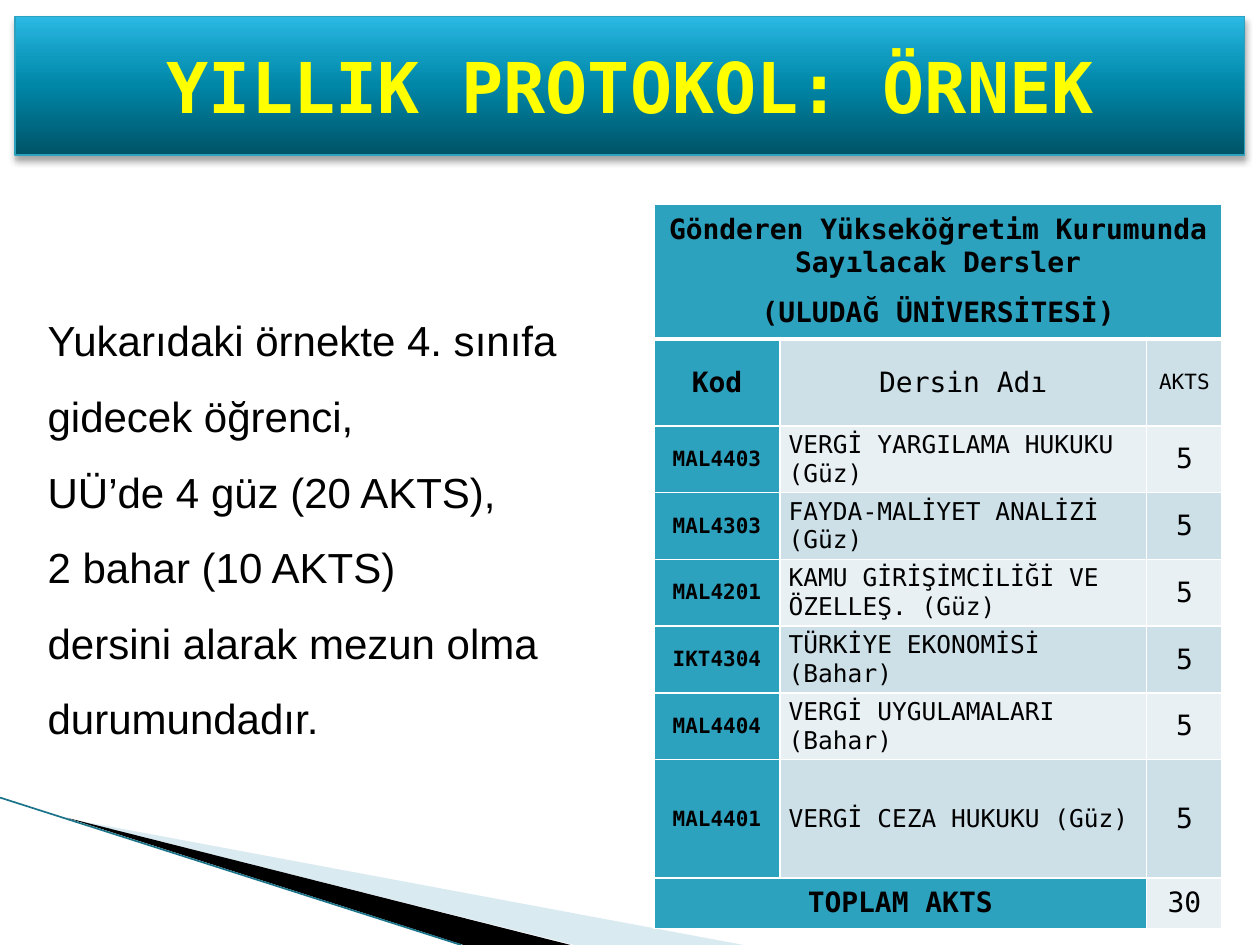
from lxml.etree import SubElement
from pptx import Presentation
from pptx.dml.color import RGBColor
from pptx.enum.shapes import MSO_CONNECTOR, MSO_SHAPE
from pptx.enum.text import MSO_ANCHOR, PP_ALIGN
from pptx.oxml import parse_xml
from pptx.oxml.ns import nsdecls, qn
from pptx.util import Inches, Pt

MONO, SANS = "DejaVu Sans Mono", "Arial"
TEAL, BLACK, WHITE, YELLOW = "2DA2BF", "000000", "FFFFFF", "FFFF00"
BANDS = ["CDE0E8", "E8F0F4"]

TITLE = "YILLIK PROTOKOL: ÖRNEK"
GRADIENT = [(0, "005367"), (50, "0086A7"), (70, "0E9ABE"), (100, "2CB9E3")]
NOTES = [
    "Yukarıdaki örnekte 4. sınıfa gidecek öğrenci,",
    "UÜ’de 4 güz (20 AKTS),",
    "2 bahar (10 AKTS)",
    "dersini alarak mezun olma durumundadır.",
]
HEADING = "Gönderen Yükseköğretim Kurumunda Sayılacak Dersler\n(ULUDAĞ ÜNİVERSİTESİ)"
LABELS = ("Kod", "Dersin Adı", "AKTS")
COURSES = [
    ("MAL4403", "VERGİ YARGILAMA HUKUKU (Güz)", "5"),
    ("MAL4303", "FAYDA-MALİYET ANALİZİ (Güz)", "5"),
    ("MAL4201", "KAMU GİRİŞİMCİLİĞİ VE ÖZELLEŞ. (Güz)", "5"),
    ("IKT4304", "TÜRKİYE EKONOMİSİ (Bahar)", "5"),
    ("MAL4404", "VERGİ UYGULAMALARI (Bahar)", "5"),
    ("MAL4401", "VERGİ CEZA HUKUKU (Güz)", "5"),
]
TOTAL = ("TOPLAM AKTS", "", "30")
COL_WIDTHS = [1, 2.91, 0.6]
ROW_HEIGHTS = [1.07, 0.69] + [0.53] * 5 + [0.94, 0.4]
WEDGES = [
    ([(0.55, 6.5), (5.9, 7.5), (4.56, 7.5)], "A0CBDC", 40),
    ([(0.53, 6.49), (4.53, 7.5), (3.68, 7.5)], BLACK, 100),
]


def rgb(color):
    """Turn a hex string into a colour."""
    return RGBColor.from_string(color)


def style(p, size, font, color=BLACK, bold=False, align=PP_ALIGN.LEFT):
    """Format a paragraph and its runs."""
    p.alignment = align
    for r in p.runs:
        r.font.size, r.font.name, r.font.bold = Pt(size), font, bold
        r.font.color.rgb = rgb(color)


def add_wedge(slide, points, color, opacity):
    """Draw one wedge of the corner decoration."""
    pts = [(Inches(x), Inches(y)) for x, y in points]
    builder = slide.shapes.build_freeform(*pts[0])
    builder.add_line_segments(pts[1:])
    sp = builder.convert_to_shape()
    sp.shadow.inherit = False
    sp.fill.solid()
    sp.fill.fore_color.rgb = rgb(color)
    sp.line.fill.background()
    if opacity < 100:
        clr = sp._element.spPr.find(qn("a:solidFill"))[0]
        SubElement(clr, qn("a:alpha"), val=str(opacity * 1000))


def add_edge(slide):
    """Draw the thin line along the wedges."""
    line = slide.shapes.add_connector(
        MSO_CONNECTOR.STRAIGHT, 0, Inches(6.33), Inches(3.66), Inches(7.5))
    line.line.color.rgb = rgb("1A7388")
    line.line.width = Pt(0.95)
    SubElement(line._element.spPr, qn("a:effectLst"))


def add_title(slide):
    """Draw the title bar with its gradient and shadow."""
    sp = slide.shapes.add_shape(
        MSO_SHAPE.RECTANGLE, Inches(0.12), Inches(0.13), Inches(9.76), Inches(1.1))
    stops = "".join(f'<a:gs pos="{pos * 1000}"><a:srgbClr val="{color}"/></a:gs>'
                    for pos, color in GRADIENT)
    spPr = sp._element.spPr
    spPr.find(qn("a:prstGeom")).addnext(parse_xml(
        f'<a:gradFill {nsdecls("a")}><a:gsLst>{stops}</a:gsLst>'
        '<a:lin ang="16200000" scaled="0"/></a:gradFill>'))
    sp.line.color.rgb = rgb(TEAL)
    sp.line.width = Pt(0.75)
    spPr.append(parse_xml(
        f'<a:effectLst {nsdecls("a")}><a:outerShdw blurRad="{Pt(4)}" dist="{Pt(3)}" '
        f'dir="5400000" rotWithShape="0"><a:srgbClr val="{BLACK}">'
        '<a:alpha val="35000"/></a:srgbClr></a:outerShdw></a:effectLst>'))
    tf = sp.text_frame
    tf.text = TITLE
    tf.vertical_anchor = MSO_ANCHOR.MIDDLE
    style(tf.paragraphs[0], 40, MONO, YELLOW, True, PP_ALIGN.CENTER)


def add_notes(slide):
    """Write the explanation on the left."""
    tf = slide.shapes.add_textbox(
        Inches(0.28), Inches(2.25), Inches(4.33), Inches(3.74)).text_frame
    tf.word_wrap = True
    tf.text = "\n".join(NOTES)
    for p in tf.paragraphs:
        p.line_spacing = 1.5
        style(p, 24, SANS)


def fill_cell(cell, text, size, fill, bold, align, bottom):
    """Set the text, fill and borders of one cell."""
    cell.text = text
    cell.vertical_anchor = MSO_ANCHOR.MIDDLE
    cell.margin_left = cell.margin_right = Inches(0.07)
    cell.margin_top = cell.margin_bottom = 0
    for p in cell.text_frame.paragraphs:
        style(p, size, MONO, BLACK, bold, align)
    cell.fill.solid()
    cell.fill.fore_color.rgb = rgb(fill)
    tcPr = cell._tc.get_or_add_tcPr()
    widths = {"lnL": 1, "lnR": 1, "lnT": 1, "lnB": bottom}
    for i, (side, width) in enumerate(widths.items()):
        tcPr.insert(i, parse_xml(
            f'<a:{side} {nsdecls("a")} w="{Pt(width)}"><a:solidFill>'
            f'<a:srgbClr val="{WHITE}"/></a:solidFill></a:{side}>'))


def add_courses(slide):
    """Build the course table."""
    rows = [(HEADING, "", ""), LABELS, *COURSES, TOTAL]
    last = len(rows) - 1
    table = slide.shapes.add_table(
        len(rows), len(COL_WIDTHS), Inches(5.19), Inches(1.62),
        Inches(sum(COL_WIDTHS)), Inches(sum(ROW_HEIGHTS))).table
    for col, width in zip(table.columns, COL_WIDTHS):
        col.width = Inches(width)
    for row, height in zip(table.rows, ROW_HEIGHTS):
        row.height = Inches(height)
    for i, row in enumerate(rows):
        is_course = 1 < i < last
        sizes = (12, 14, 16) if is_course else (16, 16, 12 if i == 1 else 16)
        for j, text in enumerate(row):
            strong = i == 0 or j == 0
            align = PP_ALIGN.LEFT if is_course and j == 1 else PP_ALIGN.CENTER
            fill_cell(table.cell(i, j), text, sizes[j],
                      TEAL if strong else BANDS[(i + 1) % 2],
                      strong, align, 3 if i == 0 else 1)
    table.cell(0, 0).merge(table.cell(0, 2))
    table.cell(last, 0).merge(table.cell(last, 1))
    table.cell(0, 0).text_frame.paragraphs[1].space_before = Pt(10.5)


def main():
    """Build the slide and save it."""
    prs = Presentation()
    prs.slide_width, prs.slide_height = Inches(10), Inches(7.5)
    slide = prs.slides.add_slide(prs.slide_layouts[6])
    for wedge in WEDGES:
        add_wedge(slide, *wedge)
    add_edge(slide)
    add_title(slide)
    add_courses(slide)
    add_notes(slide)
    prs.save("out.pptx")


if __name__ == "__main__":
    main()
